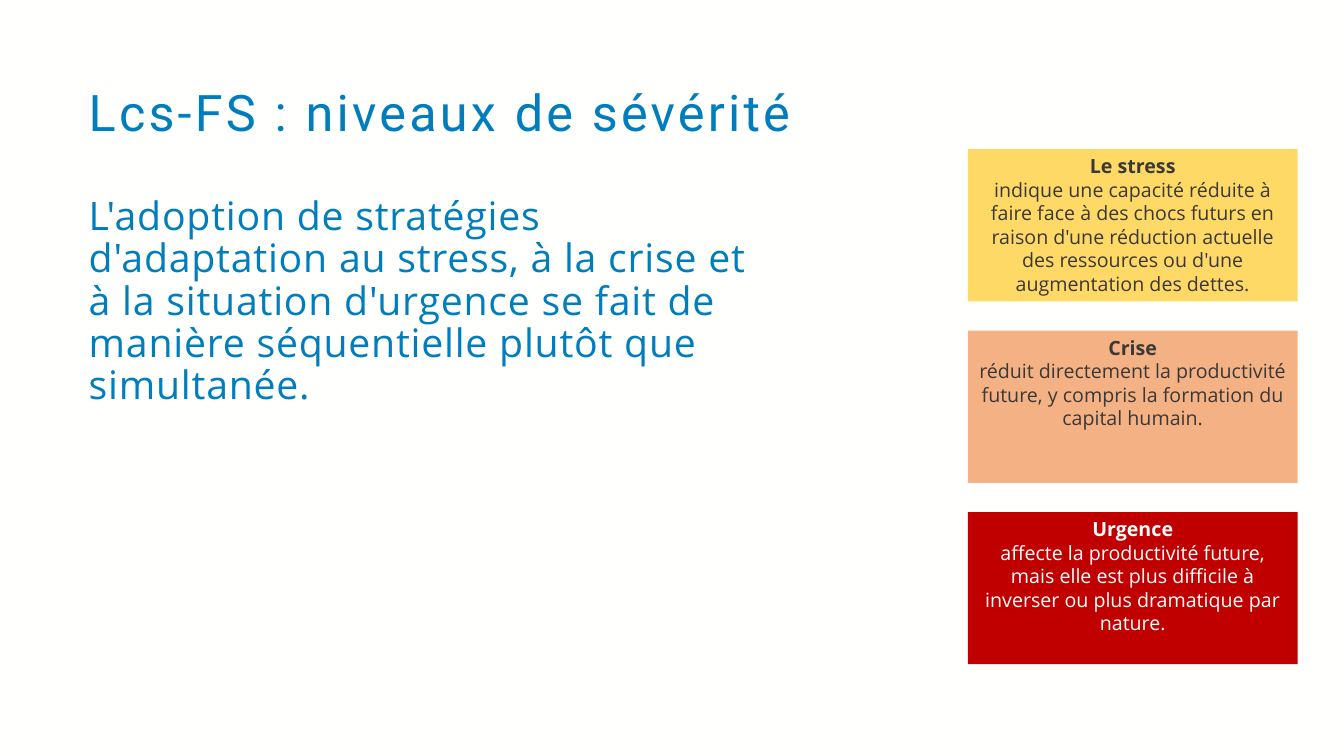
import pptx
import pptx.util
import pptx.dml.color
import pptx.enum.shapes
import pptx.enum.text
import lxml.etree
from dataclasses import dataclass

Inches = pptx.util.Inches
Align = pptx.enum.text.PP_ALIGN
Anchor = pptx.enum.text.MSO_ANCHOR

TITLE = "Lcs-FS : niveaux de sévérité"
BODY = ("L'adoption de stratégies d'adaptation au stress, à la crise et à la "
        "situation d'urgence se fait de manière séquentielle plutôt que simultanée.")
# name, meaning, fill, text colour
LEVELS = [
    ("Le stress", "indique une capacité réduite à faire face à des chocs futurs en "
     "raison d'une réduction actuelle des ressources ou d'une augmentation des dettes.",
     "FFD966", "3B3838"),
    ("Crise", "réduit directement la productivité future, y compris la formation "
     "du capital humain.", "F4B183", "3B3838"),
    ("Urgence", "affecte la productivité future, mais elle est plus difficile à "
     "inverser ou plus dramatique par nature.", "C00000", "FFFFFF"),
]


@dataclass(frozen=True)
class Theme:
    back: str = "FFFFFE"
    blue: str = "007DBC"
    head: str = "Roboto"
    text: str = "Open Sans"
    title: int = 36
    body: int = 28
    card: int = 14


THEME = Theme()


def rgb(code):
    return pptx.dml.color.RGBColor.from_string(code)


def add_run(para, text, face, size, color, bold=False, track=0):
    """Add one run; track is the letter spacing in points."""
    run = para.add_run()
    run.text = text
    font = run.font
    font.name, font.size, font.bold = face, pptx.util.Pt(size), bold
    font.color.rgb = rgb(color)
    if track:
        font._element.set("spc", str(round(track * 100)))


def fill_holder(holder, box, anchor, text, face, size, track):
    """Place a placeholder and give it one left-aligned blue paragraph."""
    holder.left, holder.top, holder.width, holder.height = map(Inches, box)
    frame = holder.text_frame
    frame.word_wrap = True
    frame.auto_size = pptx.enum.text.MSO_AUTO_SIZE.NONE
    frame.vertical_anchor = anchor
    para = frame.paragraphs[0]
    props = para._p.get_or_add_pPr()
    props.set("marL", "0")
    props.set("indent", "0")
    lxml.etree.SubElement(props, pptx.oxml.ns.qn("a:buNone"))
    para.alignment = Align.LEFT
    para.line_spacing = 0.9
    para.space_before = pptx.util.Pt(0)
    add_run(para, text, face, size, THEME.blue, track=track)


def add_card(slide, top, name, note, fill, ink):
    card = slide.shapes.add_shape(
        pptx.enum.shapes.MSO_SHAPE.RECTANGLE,
        Inches(9.6), Inches(top), Inches(3.27), Inches(1.51))
    card.shadow.inherit = False
    card.fill.solid()
    card.fill.fore_color.rgb = rgb(fill)
    card.line.fill.background()
    frame = card.text_frame
    frame.word_wrap = True
    frame.vertical_anchor = Anchor.TOP
    for para, text, bold in ((frame.paragraphs[0], name, True),
                             (frame.add_paragraph(), note, False)):
        para.alignment = Align.CENTER
        add_run(para, text, THEME.text, THEME.card, ink, bold)


def main():
    deck = pptx.Presentation()
    deck.slide_width, deck.slide_height = Inches(13.33), Inches(7.5)
    slide = deck.slides.add_slide(deck.slide_layouts[1])
    slide.background.fill.solid()
    slide.background.fill.fore_color.rgb = rgb(THEME.back)

    fill_holder(slide.shapes.title, (0.78, 0.78, 12.09, 0.72), Anchor.MIDDLE,
                TITLE, THEME.head, THEME.title, 2.3)
    fill_holder(slide.placeholders[1], (0.78, 1.9, 7, 4.27), Anchor.TOP,
                BODY, THEME.text, THEME.body, 0.6)
    for i, level in enumerate(LEVELS):
        add_card(slide, 1.48 + 1.8 * i, *level)
    deck.save("out.pptx")


if __name__ == "__main__":
    main()
